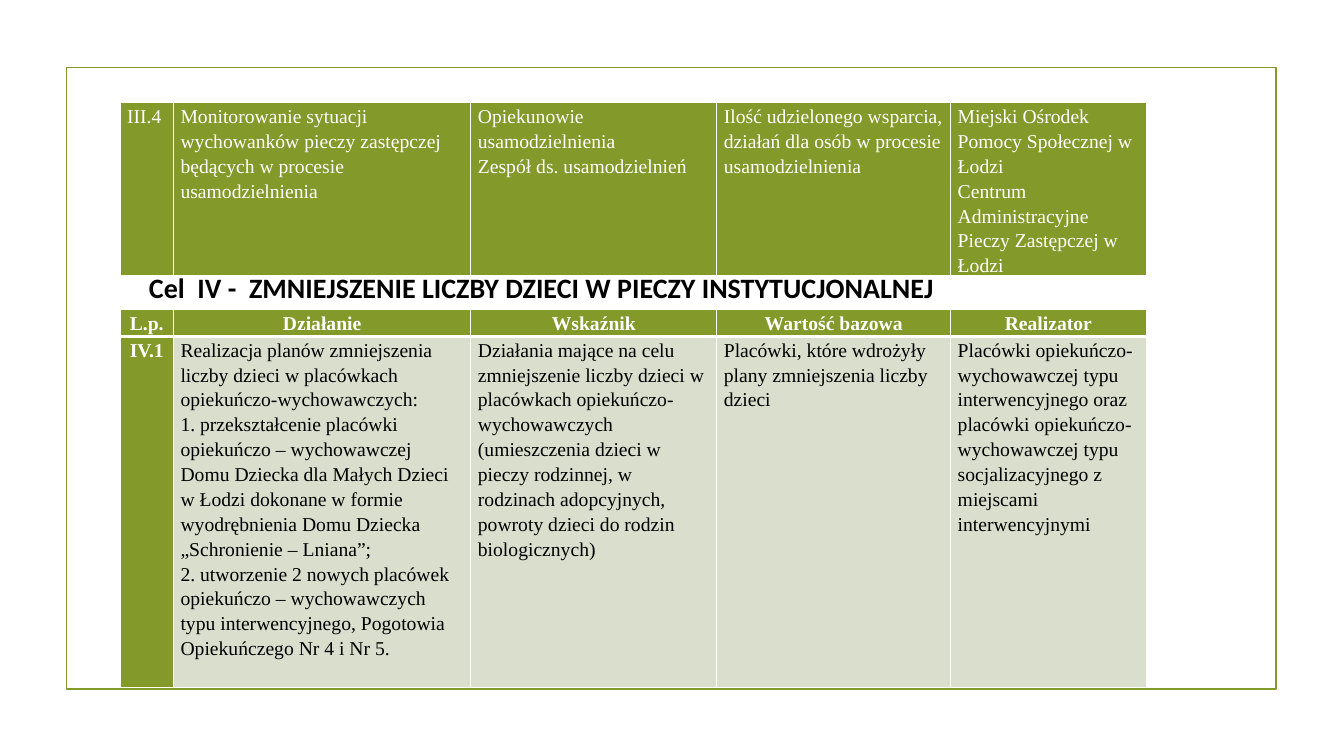
from lxml.etree import SubElement
from pptx import Presentation
from pptx.dml.color import RGBColor
from pptx.enum.shapes import MSO_SHAPE as Shape
from pptx.enum.text import MSO_AUTO_SIZE as AutoSize, PP_ALIGN as Align
from pptx.oxml.ns import qn
from pptx.util import Inches, Pt

COLORS = {"olive": "83992A", "pale": "D9DECD", "white": "FFFFFF", "black": "000000"}
COLUMN_SHARES = (3.98, 22.13, 18.3, 17.4, 14.55)
TABLE_LEFT = 8.93

MONITORING = (
    "III.4",
    "Monitorowanie sytuacji wychowanków pieczy zastępczej będących w procesie usamodzielnienia",
    "Opiekunowie usamodzielnienia\nZespół ds. usamodzielnień",
    "Ilość udzielonego wsparcia, działań dla osób w procesie usamodzielnienia",
    "Miejski Ośrodek Pomocy Społecznej w Łodzi\n"
    "Centrum Administracyjne Pieczy Zastępczej w Łodzi",
)
GOAL = "Cel  IV -  ZMNIEJSZENIE LICZBY DZIECI W PIECZY INSTYTUCJONALNEJ"
HEADINGS = ("L.p.", "Działanie", "Wskaźnik", "Wartość bazowa", "Realizator")
REDUCTION = (
    "IV.1",
    "Realizacja planów zmniejszenia liczby dzieci w placówkach opiekuńczo-wychowawczych:\n"
    "1. przekształcenie placówki opiekuńczo – wychowawczej Domu Dziecka dla Małych Dzieci "
    "w Łodzi dokonane w formie wyodrębnienia Domu Dziecka „Schronienie – Lniana”;\n"
    "2. utworzenie 2 nowych placówek opiekuńczo – wychowawczych typu interwencyjnego, "
    "Pogotowia Opiekuńczego Nr 4 i Nr 5.",
    "Działania mające na celu zmniejszenie liczby dzieci w placówkach opiekuńczo-wychowawczych "
    "(umieszczenia dzieci w pieczy rodzinnej, w rodzinach adopcyjnych, powroty dzieci do rodzin "
    "biologicznych)",
    "Placówki, które wdrożyły plany zmniejszenia liczby dzieci",
    "Placówki opiekuńczo-wychowawczej typu interwencyjnego oraz\n"
    "placówki opiekuńczo-wychowawczej typu socjalizacyjnego z miejscami interwencyjnymi",
)

PLAIN = {"color": "white"}
HEADING = {"color": "white", "bold": True, "align": Align.CENTER}
BODY = {"color": "black"}


def write(text_frame, text, *, font="Times New Roman", size=14, color="black",
          bold=False, align=Align.LEFT, spacing=1.15):
    text_frame.word_wrap = True
    text_frame.text = text
    for paragraph in text_frame.paragraphs:
        paragraph.alignment = align
        paragraph.line_spacing = spacing
        for run in paragraph.runs:
            run.font.name = font
            run.font.size = Pt(size)
            run.font.bold = bold
            run.font.color.rgb = RGBColor.from_string(COLORS[color])


def draw_borders(cell, bottom):
    properties = cell._tc.get_or_add_tcPr()
    for side, width in (("L", 1), ("R", 1), ("T", 1), ("B", bottom)):
        border = SubElement(properties, qn(f"a:ln{side}"), w=str(Pt(width)))
        fill = SubElement(border, qn("a:solidFill"))
        SubElement(fill, qn("a:srgbClr"), val=COLORS["white"])


class PlanSlide:
    """Places elements by percentages of the slide's width and height."""

    def __init__(self, deck):
        self.width, self.height = deck.slide_width, deck.slide_height
        self.slide = deck.slides.add_slide(deck.slide_layouts[6])

    def across(self, share):
        return round(self.width * share / 100)

    def down(self, share):
        return round(self.height * share / 100)

    def box(self, left, top, width, height):
        return self.across(left), self.down(top), self.across(width), self.down(height)

    def border(self, *place):
        frame = self.slide.shapes.add_shape(Shape.RECTANGLE, *self.box(*place))
        frame.shadow.inherit = False
        frame.fill.background()
        frame.line.color.rgb = RGBColor.from_string(COLORS["olive"])
        frame.line.width = Pt(1.25)

    def title(self, text, *place):
        heading = self.slide.shapes.add_textbox(*self.box(*place))
        write(heading.text_frame, text, font="Calibri", size=20, bold=True, spacing=1)
        heading.text_frame.auto_size = AutoSize.SHAPE_TO_FIT_TEXT

    def table(self, top, rows):
        """Each row is (height share, bottom border, cells of (text, fill, format))."""
        place = self.box(TABLE_LEFT, top, sum(COLUMN_SHARES), sum(row[0] for row in rows))
        grid = self.slide.shapes.add_table(len(rows), len(COLUMN_SHARES), *place).table
        for column, share in zip(grid.columns, COLUMN_SHARES):
            column.width = self.across(share)
        for row, (share, bottom, contents) in zip(grid.rows, rows):
            row.height = self.down(share)
            for cell, (text, fill, text_format) in zip(row.cells, contents):
                cell.margin_left = cell.margin_right = Inches(0.07)
                cell.margin_top = cell.margin_bottom = 0
                draw_borders(cell, bottom)
                cell.fill.solid()
                cell.fill.fore_color.rgb = RGBColor.from_string(COLORS[fill])
                write(cell.text_frame, text, **text_format)


def main():
    deck = Presentation()
    deck.slide_width, deck.slide_height = Inches(13.33), Inches(7.5)
    plan = PlanSlide(deck)
    plan.border(4.95, 8.93, 90, 82.27)
    plan.table(13.6, [(21.47, 3, [(text, "olive", PLAIN) for text in MONITORING])])
    plan.title(GOAL, 10.35, 35.07, 75, 5.87)
    number, *details = REDUCTION
    plan.table(40.93, [
        (3.47, 3, [(text, "olive", HEADING) for text in HEADINGS]),
        (46.27, 1, [(number, "olive", HEADING)] + [(text, "pale", BODY) for text in details]),
    ])
    deck.save("out.pptx")


if __name__ == "__main__":
    main()
